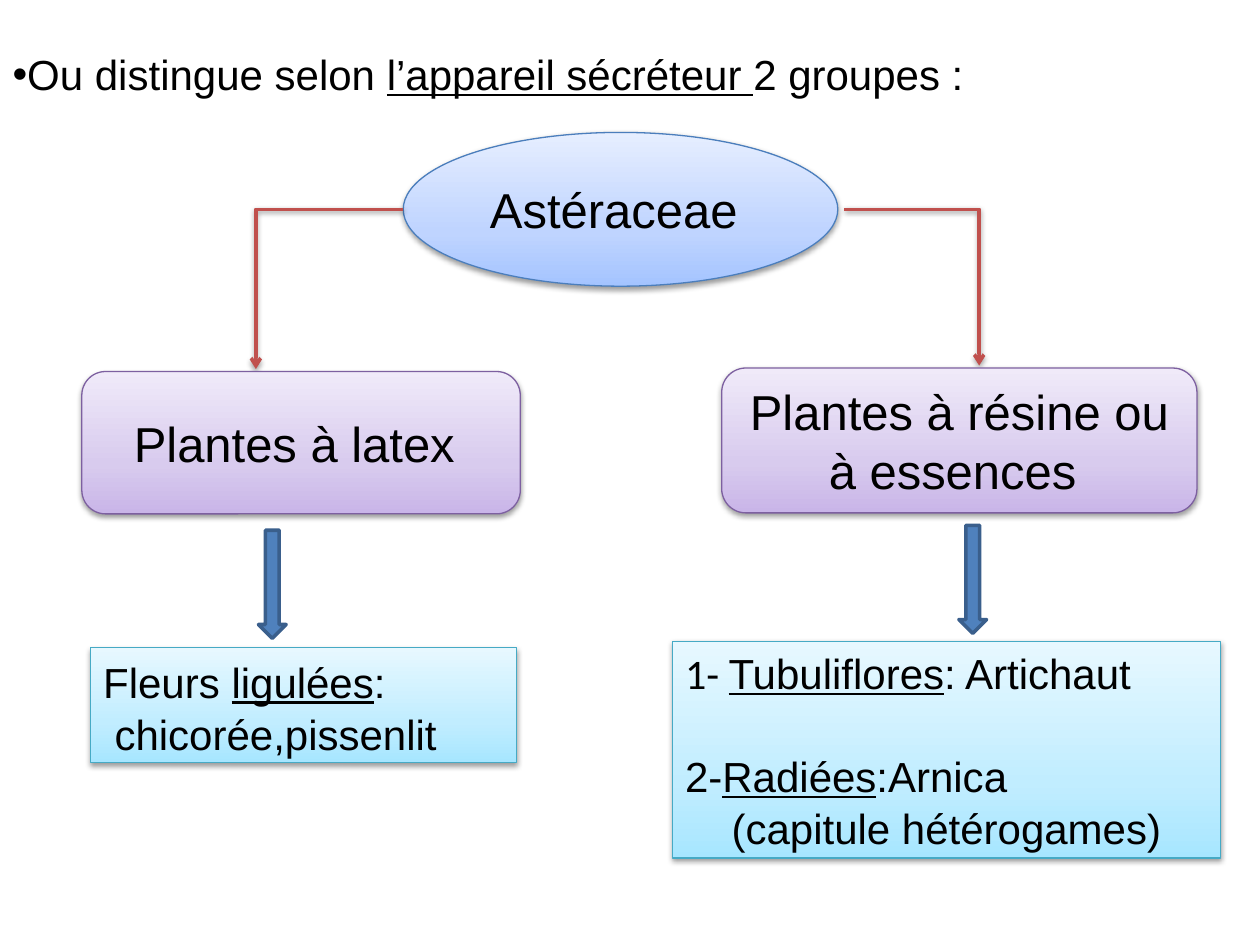
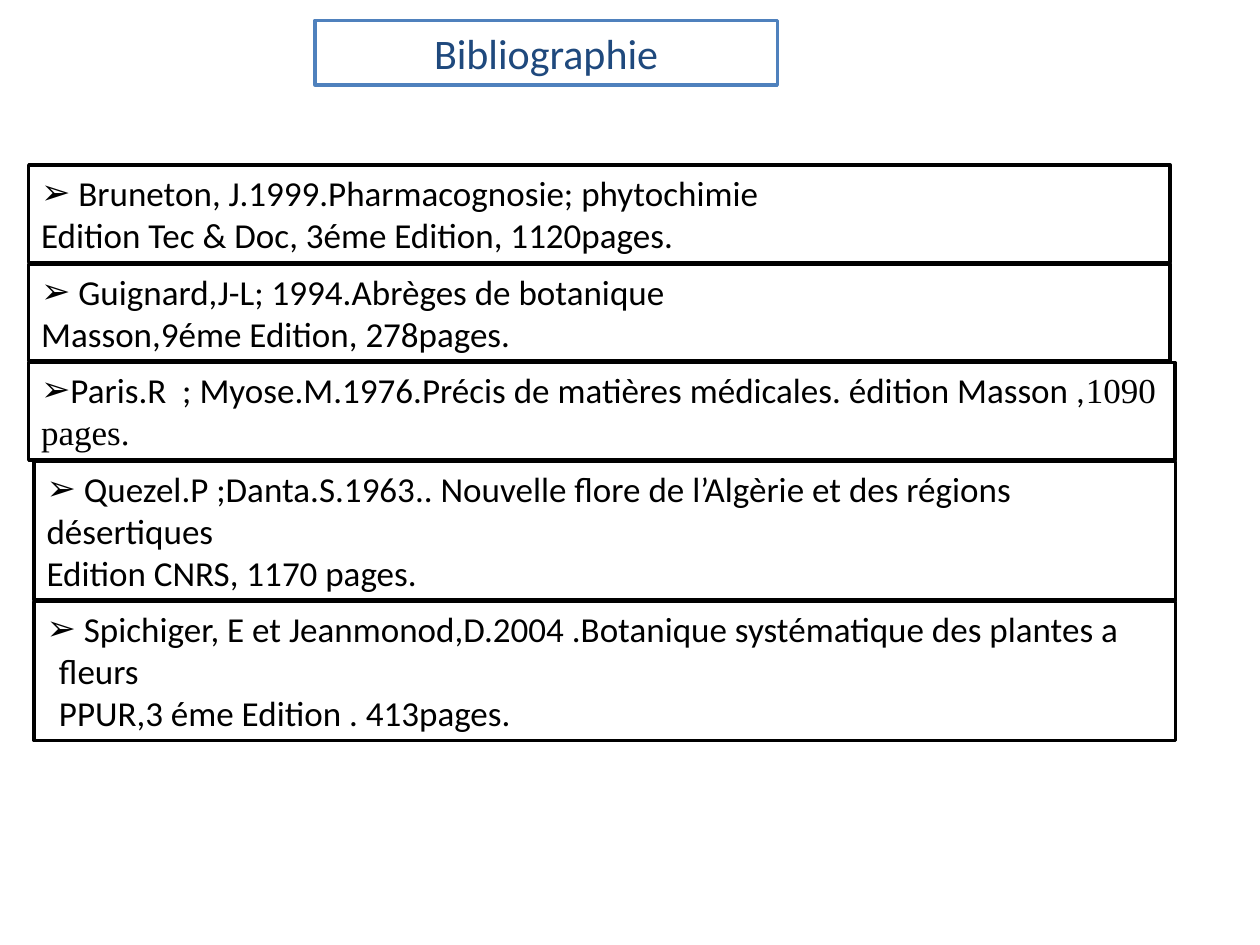
from copy import deepcopy

from lxml import etree
from pptx import Presentation
from pptx.dml.color import RGBColor
from pptx.enum.shapes import MSO_CONNECTOR, MSO_SHAPE
from pptx.enum.text import MSO_ANCHOR, MSO_AUTO_SIZE, PP_ALIGN
from pptx.oxml.ns import qn
from pptx.util import Cm, Pt

# Enum members
OVAL, ROUND = MSO_SHAPE.OVAL, MSO_SHAPE.ROUNDED_RECTANGLE
RECT, DOWN = MSO_SHAPE.RECTANGLE, MSO_SHAPE.DOWN_ARROW
ELBOW = MSO_CONNECTOR.ELBOW
LEFT, CENTER = PP_ALIGN.LEFT, PP_ALIGN.CENTER
TOP, MIDDLE = MSO_ANCHOR.TOP, MSO_ANCHOR.MIDDLE
NO_FIT = MSO_AUTO_SIZE.NONE

# Colours
BLACK = RGBColor(0x00, 0x00, 0x00)
WHITE = RGBColor(0xFF, 0xFF, 0xFF)
NAVY = RGBColor(0x1F, 0x49, 0x7D)
BLUE = RGBColor(0x4F, 0x81, 0xBD)
STEEL = RGBColor(0x3A, 0x5F, 0x8C)
RED = RGBColor(0xC0, 0x50, 0x4D)

# Tints: three gradient stops from bottom to top, then the outline
SKY = [RGBColor.from_string(c) for c in ("A4C4FF", "BFD4FF", "E6EEFF", "4B7EBC")]
LILAC = [RGBColor.from_string(c) for c in ("C9B5E8", "D8CBEE", "F0EAF9", "7D60A0")]
AQUA = [RGBColor.from_string(c) for c in ("A7E6FF", "C1EDFF", "E7F8FF", "46AAC5")]
STOPS = (0, 0.35, 1)

ARIAL, CALIBRI, TIMES = "Arial", "Calibri", "Times New Roman"


class Deck:
    """Holds the style and the current slide."""

    def __init__(self):
        self.prs = Presentation()
        self.prs.slide_width, self.prs.slide_height = Cm(25.4), Cm(19.05)
        self.slide = None

    def page(self):
        self.slide = self.prs.slides.add_slide(self.prs.slide_layouts[5])

    def frame(self, shape, anchor):
        frame = shape.text_frame
        frame.word_wrap = True
        frame.auto_size = NO_FIT
        frame.vertical_anchor = anchor
        return frame

    def para(self, frame, runs, size, font=ARIAL, color=BLACK, align=LEFT,
             bullet=None, indent=0, hang=0, before=0, leading=None):
        """Each run is a text or (text, font); underscores mark underlines."""
        first = frame.paragraphs[0]
        par = frame.add_paragraph() if first.runs else first
        par.alignment = align
        props = par._p.get_or_add_pPr()
        props.set("marL", str(Cm(indent)))
        props.set("indent", str(Cm(-hang)))
        if bullet:
            etree.SubElement(props, qn("a:buFont")).set("typeface", ARIAL)
            etree.SubElement(props, qn("a:buChar")).set("char", bullet)
        if before:
            par.space_before = Pt(before)
        if leading:
            par.line_spacing = leading
        for item in runs:
            text, face = (item, font) if isinstance(item, str) else item
            for i, part in enumerate(text.split("_")):
                if part:
                    run = par.add_run()
                    run.text = part
                    run.font.name, run.font.size = face, Pt(size)
                    run.font.color.rgb = color
                    run.font.underline = i % 2 == 1

    def title(self, box, text, **style):
        title = self.slide.shapes.title
        title.left, title.top, title.width, title.height = map(Cm, box)
        self.para(self.frame(title, MIDDLE), [text], 24, **style)
        return title

    def paint(self, shape, fill, line, width):
        shape.fill.solid()
        shape.fill.fore_color.rgb = fill
        shape.line.color.rgb = line
        shape.line.width = Pt(width)

    def shade(self, props):
        """Adds the soft drop shadow to an effect list."""
        drop = etree.SubElement(props, qn("a:outerShdw"), blurRad="40000",
                                dist="20000", dir="5400000", rotWithShape="0")
        tone = etree.SubElement(drop, qn("a:srgbClr"), val=str(BLACK))
        etree.SubElement(tone, qn("a:alpha"), val="38000")

    def shape(self, kind, box):
        shape = self.slide.shapes.add_shape(kind, *map(Cm, box))
        shape.shadow.inherit = False
        return shape

    def plain(self, kind, box, fill, line):
        shape = self.shape(kind, box)
        self.paint(shape, fill, line, 2)
        return shape

    def glow(self, kind, box, tint, anchor=MIDDLE):
        """Draws a shape with gradient and shadow; returns its text frame."""
        shape = self.shape(kind, box)
        shape.fill.gradient()
        shape.fill.gradient_angle = 90
        stops = shape._element.spPr.find(qn("a:gradFill")).find(qn("a:gsLst"))
        stops.insert(1, deepcopy(stops[0]))
        for stop, color, place in zip(shape.fill.gradient_stops, tint, STOPS):
            stop.color.rgb, stop.position = color, place
        shape.line.color.rgb = tint[3]
        shape.line.width = Pt(0.75)
        self.shade(shape._element.spPr.find(qn("a:effectLst")))
        return self.frame(shape, anchor)

    def node(self, kind, box, tint, text):
        self.para(self.glow(kind, box, tint), [text], 28, align=CENTER)

    def branch(self, *ends):
        """Draws a one-bend arrow: across, then down."""
        line = self.slide.shapes.add_connector(ELBOW, *map(Cm, ends))
        line.line.color.rgb = RED
        line.line.width = Pt(2)
        props = line._element.spPr
        props.find(qn("a:prstGeom")).set("prst", "bentConnector2")
        etree.SubElement(props.find(qn("a:ln")), qn("a:tailEnd"), type="arrow")
        self.shade(etree.SubElement(props, qn("a:effectLst")))


def groups(deck):
    deck.page()
    deck.title((0, 0.81, 23.57, 1.35),
               "Ou distingue selon _l’appareil sécréteur _2 groupes :", bullet="•")

    # Family and its two groups
    deck.node(OVAL, (8.13, 2.67, 8.76, 3.1), SKY, "Astéraceae ")
    deck.branch(8.13, 4.22, 5.16, 7.44)
    deck.branch(17.02, 4.22, 19.74, 7.37)
    deck.node(ROUND, (1.65, 7.49, 8.84, 2.87), LILAC, "Plantes à latex ")
    deck.node(ROUND, (14.55, 7.42, 9.58, 2.92), LILAC,
              "Plantes à résine ou à essences ")

    # Examples of each group
    latex = deck.glow(RECT, (1.83, 13.06, 8.59, 2.31), AQUA, TOP)
    deck.para(latex, ["Fleurs _ligulées_:"], 24, leading=1.04)
    deck.para(latex, ["chicorée,pissenlit"], 24, indent=0.23, leading=1.04)
    resin = deck.glow(RECT, (13.56, 12.93, 11.05, 4.37), AQUA, TOP)
    deck.para(resin, [("1- ", CALIBRI), "_Tubuliflores_: Artichaut"], 24)
    deck.para(resin, ["2-_Radiées_:Arnica"], 24, before=28.8, leading=1.04)
    deck.para(resin, ["(capitule hétérogames)"], 24, indent=0.94, leading=1.04)

    # Down arrows
    for left, top in ((5.21, 10.69), (19.33, 10.59)):
        deck.plain(DOWN, (left, top, 0.56, 2.18), BLUE, STEEL)


def sources(deck):
    deck.page()
    title = deck.title((6.35, 0.41, 9.32, 1.3), "Bibliographie",
                       font=CALIBRI, color=NAVY, align=CENTER)
    deck.paint(title, WHITE, BLUE, 2)

    # Each book: left, width, height, indent, paragraphs
    books = [
        (0.58, 23.01, 1.96, 0, [[" Bruneton, J.1999.Pharmacognosie; phytochimie"],
                                ["Edition Tec & Doc, 3éme Edition, 1120pages."]]),
        (0.58, 23.01, 1.96, 0, [[" Guignard,J-L; 1994.Abrèges de botanique"],
                                ["Masson,9éme Edition, 278pages."]]),
        (0.58, 23.11, 1.96, 0, [["Paris.R  ; Myose.M.1976.Précis de matières "
                                 "médicales. édition Masson ,",
                                 ("1090 pages.", TIMES)]]),
        (0.69, 23.01, 2.8, 0, [[" Quezel.P ;Danta.S.1963.. Nouvelle flore de "
                                "l’Algèrie et des régions désertiques"],
                               ["Edition CNRS, 1170 pages."]]),
        (0.69, 23.01, 2.8, 0.25, [[" Spichiger, E et Jeanmonod,D.2004 .Botanique "
                                   "systématique des plantes a fleurs"],
                                  ["PPUR,3 éme Edition . 413pages."]]),
    ]
    top = 3.33
    for left, width, height, indent, lines in books:
        box = deck.plain(RECT, (left, top, width, height), WHITE, BLACK)
        frame = deck.frame(box, TOP)
        for i, runs in enumerate(lines):
            deck.para(frame, runs, 20, font=CALIBRI, indent=indent,
                      bullet=None if i else "➢", hang=0 if i else indent)
        top += height + 0.03


def main():
    deck = Deck()
    groups(deck)
    sources(deck)
    deck.prs.save("out.pptx")


if __name__ == "__main__":
    main()
